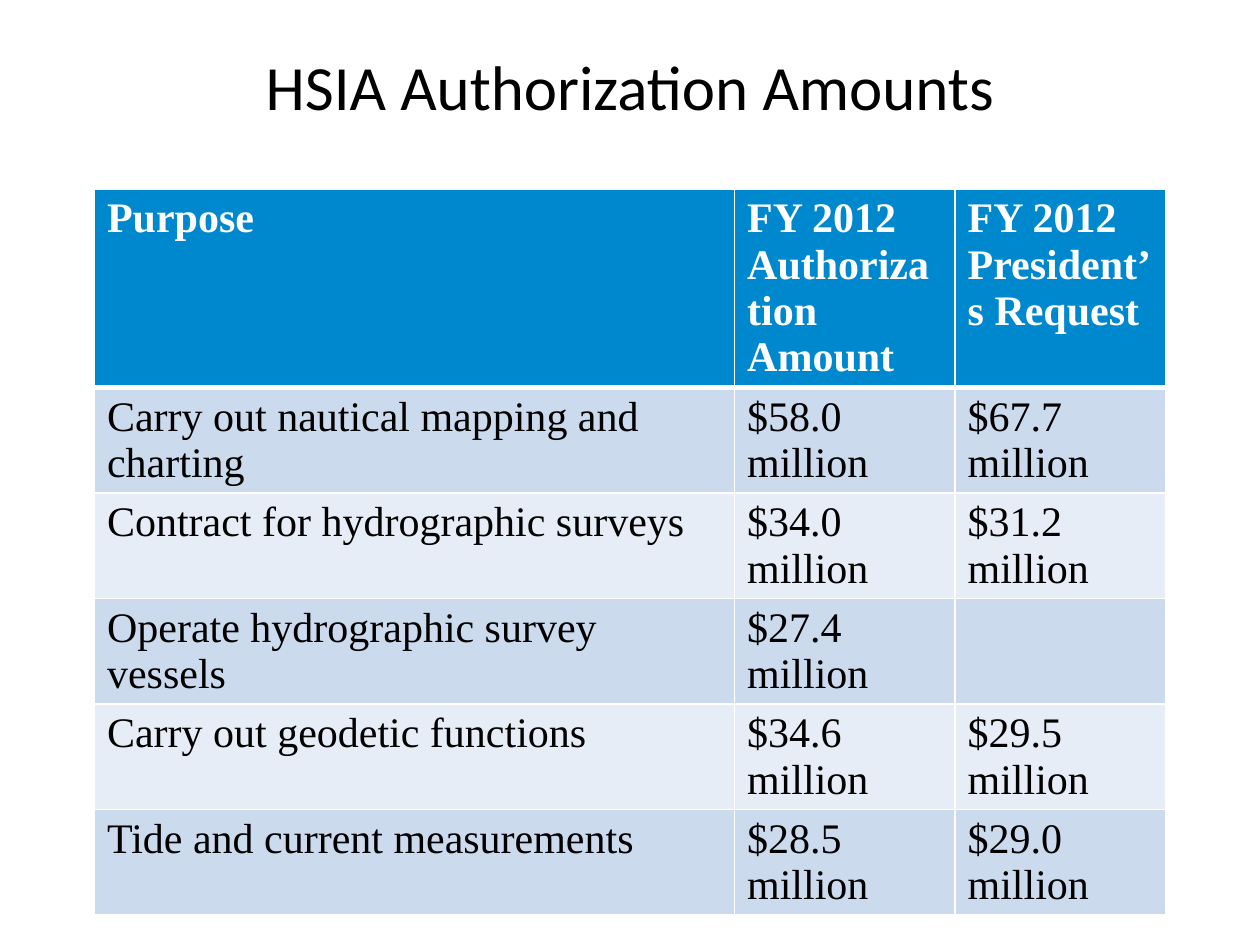
from dataclasses import dataclass

from lxml.etree import SubElement
from pptx import Presentation
from pptx.dml.color import RGBColor
from pptx.enum.text import MSO_ANCHOR, PP_ALIGN
from pptx.oxml.ns import qn
from pptx.util import Inches, Pt


@dataclass(frozen=True)
class Theme:
    title_font: str = "Calibri"
    body_font: str = "Times New Roman"
    title_size: int = 36
    body_size: int = 24
    dark: str = "000000"
    light: str = "FFFFFF"
    header: str = "0088CE"
    bands: tuple = ("CCDAED", "E7EDF6")
    rule: int = 1
    header_rule: int = 3


class Deck:
    def __init__(self, theme, width=10, height=7.5):
        self.theme = theme
        self.prs = Presentation()
        self.prs.slide_width = Inches(width)
        self.prs.slide_height = Inches(height)
        self.s = None

    def add_slide(self):
        self.s = self.prs.slides.add_slide(self.prs.slide_layouts[5])

    def box(self, x, y, w, h):
        """Turn shares of the slide's size into lengths."""
        pw, ph = self.prs.slide_width, self.prs.slide_height
        return int(x * pw), int(y * ph), int(w * pw), int(h * ph)

    def style(self, font, name, size, color, bold=False):
        font.name, font.size, font.bold = name, Pt(size), bold
        font.color.rgb = RGBColor.from_string(color)

    def title(self, text, *area):
        sp = self.s.shapes.title
        sp.left, sp.top, sp.width, sp.height = self.box(*area)
        tf = sp.text_frame
        tf.text = text
        tf.vertical_anchor = MSO_ANCHOR.MIDDLE
        p = tf.paragraphs[0]
        p.alignment, p.line_spacing = PP_ALIGN.CENTER, 0.9
        t = self.theme
        self.style(p.runs[0].font, t.title_font, t.title_size, t.dark)

    def borders(self, cell, top, bottom):
        t = self.theme
        tcPr = cell._tc.get_or_add_tcPr()
        sides = (("lnL", t.rule), ("lnR", t.rule), ("lnT", top), ("lnB", bottom))
        for i, (side, width) in enumerate(sides):
            ln = SubElement(tcPr, qn(f"a:{side}"), w=str(Pt(width)))
            fill = SubElement(ln, qn("a:solidFill"))
            SubElement(fill, qn("a:srgbClr"), val=t.light)
            tcPr.insert(i, ln)  # borders come before the fill

    def table(self, rows, col_widths, row_height, x, y):
        t = self.theme
        area = self.box(x, y, sum(col_widths), row_height * len(rows))
        table = self.s.shapes.add_table(len(rows), len(col_widths), *area).table
        for col, share in zip(table.columns, col_widths):
            col.width = int(share * self.prs.slide_width)
        for i, row in enumerate(rows):
            is_header = i == 0
            fill = t.header if is_header else t.bands[(i - 1) % 2]
            color = t.light if is_header else t.dark
            for j, text in enumerate(row):
                cell = table.cell(i, j)
                cell.text = text
                cell.fill.solid()
                cell.fill.fore_color.rgb = RGBColor.from_string(fill)
                self.borders(cell,
                             top=t.header_rule if i == 1 else t.rule,
                             bottom=t.header_rule if is_header else t.rule)
                p = cell.text_frame.paragraphs[0]
                for r in p.runs:
                    self.style(r.font, t.body_font, t.body_size, color, is_header)


AMOUNTS = [
    ("Purpose", "FY 2012 Authorization Amount", "FY 2012 President’s Request"),
    ("Carry out nautical mapping and charting", "$58.0 million", "$67.7 million"),
    ("Contract for hydrographic surveys", "$34.0 million", "$31.2 million"),
    ("Operate hydrographic survey vessels", "$27.4 million", ""),
    ("Carry out geodetic functions", "$34.6 million", "$29.5 million"),
    ("Tide and current measurements", "$28.5 million", "$29.0 million"),
]


def main():
    deck = Deck(Theme())
    deck.add_slide()

    # Title across the content width
    deck.title("HSIA Authorization Amounts", 0.075, 0.01, 0.85, 0.17)

    # Authorized and requested amounts; rows grow to fit their text
    deck.table(AMOUNTS, (0.508, 0.175, 0.167), 0.41 / 7.5, x=0.075, y=0.2)

    deck.prs.save("out.pptx")


if __name__ == "__main__":
    main()
